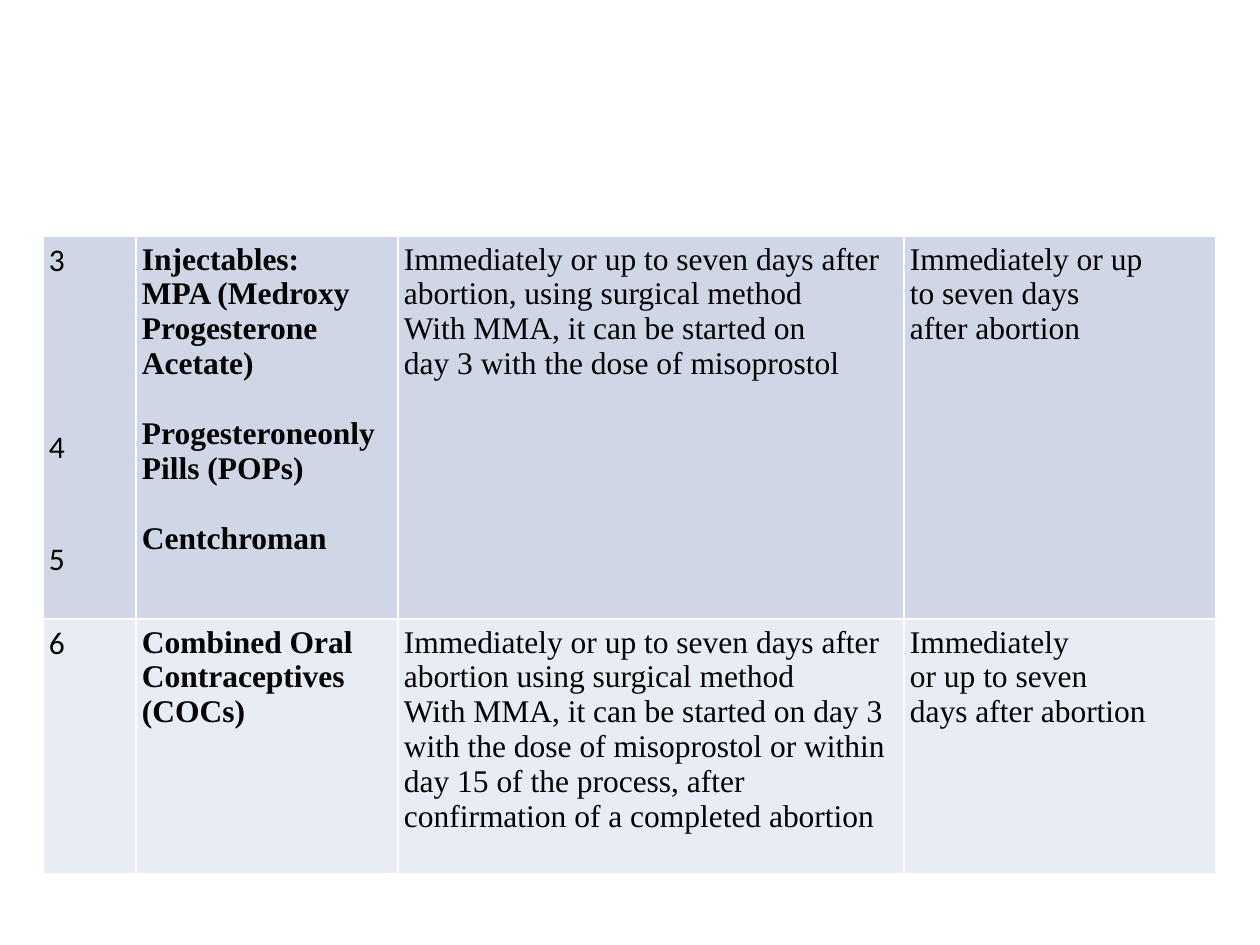
from dataclasses import dataclass

from lxml.etree import SubElement
from pptx import Presentation
from pptx.dml.color import RGBColor
from pptx.oxml.ns import qn
from pptx.util import Emu, Pt

EMU_PER_PX = 914400 / 126


@dataclass(frozen=True)
class Theme:
    text: str = "000000"
    border: str = "FFFFFF"
    bands: tuple = ("CFD7E7", "E8ECF4")
    number_font: str = "Calibri"
    body_font: str = "Times New Roman"
    size: int = 18
    border_width: int = 1


THEME = Theme()
COLUMN_WIDTHS = (93, 262, 506, 312)
ROW_HEIGHTS = (383, 255)
CELL_MARGIN = 6
METHOD_GAP = 35

# Each cell is a list of (text, space before in px); "\v" is a line break
ROWS = [
    [
        [("3", 0), ("4", 148), ("5", 74)],
        [
            ("Injectables:", 0),
            ("MPA (Medroxy", 0),
            ("Progesterone", 0),
            ("Acetate)", 0),
            ("Progesteroneonly", METHOD_GAP),
            ("Pills (POPs)", 0),
            ("Centchroman", METHOD_GAP),
        ],
        [("Immediately or up to seven days after abortion, using surgical method\v"
          "With MMA, it can be started on\vday 3 with the dose of misoprostol", 0)],
        [("Immediately or up\vto seven days\vafter abortion", 0)],
    ],
    [
        [("6", 0)],
        [("Combined Oral\vContraceptives\v(COCs)", 0)],
        [("Immediately or up to seven days after abortion using surgical method\v"
          "With MMA, it can be started on day 3 with the dose of misoprostol or within "
          "day 15 of the process, after confirmation of a completed abortion", 0)],
        [("Immediately\vor up to seven\vdays after abortion", 0)],
    ],
]


def px(length):
    return Emu(round(length * EMU_PER_PX))


def write_text(paragraph, text, *, font, bold=False, space_before=0):
    paragraph.text = text
    if space_before:
        paragraph.space_before = px(space_before)
    for run in paragraph.runs:
        run.font.name = font
        run.font.size = Pt(THEME.size)
        run.font.bold = bold
        run.font.color.rgb = RGBColor.from_string(THEME.text)


def style_cell(cell, fill):
    cell.margin_left = cell.margin_right = px(CELL_MARGIN)
    cell.margin_top = cell.margin_bottom = px(CELL_MARGIN)
    # Borders come before the fill in the cell properties
    properties = cell._tc.get_or_add_tcPr()
    for side in ("a:lnL", "a:lnR", "a:lnT", "a:lnB"):
        line = SubElement(properties, qn(side), w=str(Pt(THEME.border_width)))
        solid = SubElement(line, qn("a:solidFill"))
        SubElement(solid, qn("a:srgbClr"), val=THEME.border)
    cell.fill.solid()
    cell.fill.fore_color.rgb = RGBColor.from_string(fill)


def add_contraceptive_table(slide, left, top):
    shape = slide.shapes.add_table(
        len(ROWS), len(COLUMN_WIDTHS), px(left), px(top),
        px(sum(COLUMN_WIDTHS)), px(sum(ROW_HEIGHTS)))
    table = shape.table
    table.first_row = False
    table.horz_banding = False
    for column, width in zip(table.columns, COLUMN_WIDTHS):
        column.width = px(width)
    for row, height in zip(table.rows, ROW_HEIGHTS):
        row.height = px(height)

    for row, contents, fill in zip(table.rows, ROWS, THEME.bands):
        for index, (cell, paragraphs) in enumerate(zip(row.cells, contents)):
            style_cell(cell, fill)
            frame = cell.text_frame
            for position, (text, gap) in enumerate(paragraphs):
                paragraph = frame.add_paragraph() if position else frame.paragraphs[0]
                # Numbers in the first column, bold method names in the second
                write_text(
                    paragraph, text, space_before=gap, bold=index == 1,
                    font=THEME.body_font if index else THEME.number_font)


def main():
    presentation = Presentation()
    presentation.slide_width = px(1260)
    presentation.slide_height = px(945)
    slide = presentation.slides.add_slide(presentation.slide_layouts[6])
    add_contraceptive_table(slide, left=43, top=236)
    presentation.save("out.pptx")


if __name__ == "__main__":
    main()
